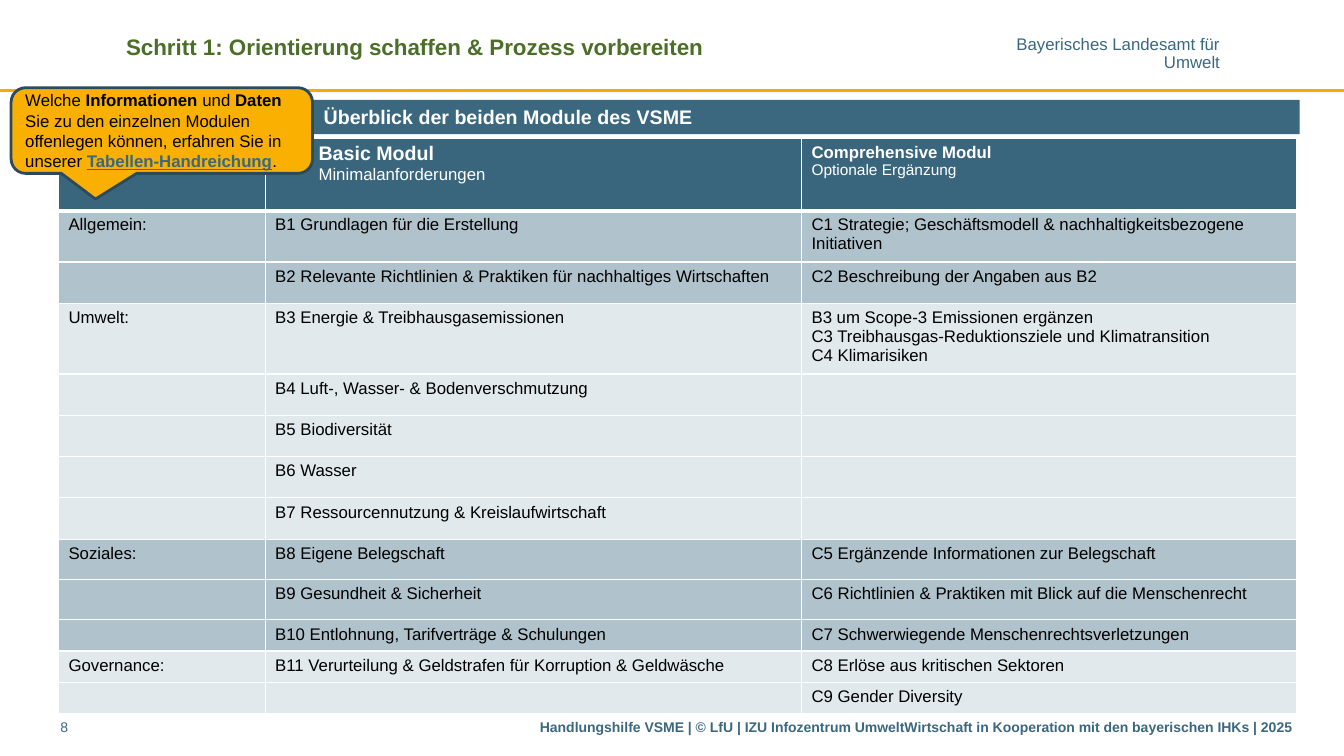
from lxml import etree
from pptx import Presentation
from pptx.dml.color import RGBColor
from pptx.enum.shapes import MSO_CONNECTOR, MSO_SHAPE
from pptx.enum.text import MSO_ANCHOR, PP_ALIGN
from pptx.oxml.ns import qn
from pptx.util import Inches, Pt

TEAL = RGBColor(0x3B, 0x68, 0x7F)
HEADER_TEAL = RGBColor(0x3A, 0x66, 0x7D)
LINK_TEAL = RGBColor(0x3B, 0x68, 0x7E)
DARK_TEAL = RGBColor(0x2B, 0x4B, 0x5C)
GREEN = RGBColor(0x4B, 0x6E, 0x28)
RULE_YELLOW = RGBColor(0xF9, 0xAA, 0x00)
CALLOUT_YELLOW = RGBColor(0xF9, 0xB0, 0x00)
MID_BLUE = RGBColor(0xB0, 0xC2, 0xCB)
PALE_BLUE = RGBColor(0xE1, 0xE9, 0xED)
WHITE = RGBColor(0xFF, 0xFF, 0xFF)
BLACK = RGBColor(0, 0, 0)
LEFT, RIGHT = PP_ALIGN.LEFT, PP_ALIGN.RIGHT
TOP, MIDDLE = MSO_ANCHOR.TOP, MSO_ANCHOR.MIDDLE


def write_lines(frame, lines, size, color, bold=False, align=LEFT):
    frame.word_wrap = True
    frame.text = "\n".join(lines)
    for para in frame.paragraphs:
        para.alignment = align
        para.font.name = "Arial"
        para.font.size = Pt(size)
        para.font.bold = bold
        para.font.color.rgb = color


def add_border(cell, side, points):
    border = etree.SubElement(cell._tc.get_or_add_tcPr(), qn(f"a:ln{side}"), w=str(Pt(points)))
    fill = etree.SubElement(border, qn("a:solidFill"))
    etree.SubElement(fill, qn("a:srgbClr"), val=str(WHITE))


deck = Presentation()
deck.slide_width = Inches(13.33)
deck.slide_height = Inches(7.5)
page = deck.slides.add_slide(deck.slide_layouts[5])
shapes = page.shapes

rule = shapes.add_connector(MSO_CONNECTOR.STRAIGHT, 0, Inches(0.9), Inches(13.33), Inches(0.9))
rule.line.color.rgb = RULE_YELLOW
rule.line.width = Pt(2)
etree.SubElement(rule._element.spPr, qn("a:effectLst"))

title = shapes.title
title.left, title.top = Inches(1.15), Inches(0.28)
title.width, title.height = Inches(6.3), Inches(0.64)
title.text_frame.vertical_anchor = TOP
write_lines(title.text_frame, ["Schritt 1: Orientierung schaffen & Prozess vorbereiten"], 16, GREEN, True)

agency = shapes.add_textbox(Inches(10.07), Inches(0.37), Inches(2.03), Inches(0.34)).text_frame
agency.margin_left = agency.margin_right = agency.margin_top = agency.margin_bottom = 0
write_lines(agency, ["Bayerisches Landesamt für", "Umwelt"], 12, TEAL, align=RIGHT)
for para in agency.paragraphs:
    para.line_spacing = 0.85

page_number = shapes.add_textbox(Inches(0.6), Inches(7.08), Inches(0.7), Inches(0.31)).text_frame
page_number.margin_left = page_number.margin_right = 0
write_lines(page_number, ["8"], 10, TEAL)

footer = shapes.add_textbox(Inches(5.17), Inches(7.08), Inches(7.74), Inches(0.31)).text_frame
write_lines(
    footer,
    ["Handlungshilfe VSME | © LfU | IZU Infozentrum UmweltWirtschaft in Kooperation mit den bayerischen IHKs | 2025"],
    10, TEAL, True, RIGHT,
)

module_rows = [
    (0.72, HEADER_TEAL, "", "Basic Modul\nMinimalanforderungen", "Comprehensive Modul\nOptionale Ergänzung"),
    (0.51, MID_BLUE, "Allgemein:", "B1 Grundlagen für die Erstellung",
     "C1 Strategie; Geschäftsmodell & nachhaltigkeitsbezogene Initiativen"),
    (0.41, MID_BLUE, "", "B2 Relevante Richtlinien & Praktiken für nachhaltiges Wirtschaften",
     "C2 Beschreibung der Angaben aus B2"),
    (0.69, PALE_BLUE, "Umwelt:", "B3 Energie & Treibhausgasemissionen",
     "B3 um Scope-3 Emissionen ergänzen\n"
     "C3 Treibhausgas-Reduktionsziele und Klimatransition\nC4 Klimarisiken"),
    (0.41, PALE_BLUE, "", "B4 Luft-, Wasser- & Bodenverschmutzung", ""),
    (0.41, PALE_BLUE, "", "B5 Biodiversität", ""),
    (0.41, PALE_BLUE, "", "B6 Wasser", ""),
    (0.41, PALE_BLUE, "", "B7 Ressourcennutzung & Kreislaufwirtschaft", ""),
    (0.4, MID_BLUE, "Soziales:", "B8 Eigene Belegschaft", "C5 Ergänzende Informationen zur Belegschaft"),
    (0.4, MID_BLUE, "", "B9 Gesundheit & Sicherheit",
     "C6 Richtlinien & Praktiken mit Blick auf die Menschenrecht"),
    (0.31, MID_BLUE, "", "B10 Entlohnung, Tarifverträge & Schulungen",
     "C7 Schwerwiegende Menschenrechtsverletzungen"),
    (0.31, PALE_BLUE, "Governance:", "B11 Verurteilung & Geldstrafen für Korruption & Geldwäsche",
     "C8 Erlöse aus kritischen Sektoren"),
    (0.31, PALE_BLUE, "", "", "C9 Gender Diversity"),
]
table = shapes.add_table(
    len(module_rows), 3, Inches(0.58), Inches(1.37), Inches(12.28), Inches(5.7)
).table
for column, width in zip(table.columns, (2.05, 5.32, 4.91)):
    column.width = Inches(width)
for row_index, (height, fill_color, *texts) in enumerate(module_rows):
    table.rows[row_index].height = Inches(height)
    is_header = row_index == 0
    for column_index, text in enumerate(texts):
        cell = table.cell(row_index, column_index)
        for side in "LRTB":
            heavy = (is_header and side == "B") or (row_index == 1 and side == "T")
            add_border(cell, side, 3 if heavy else 1)
        cell.fill.solid()
        cell.fill.fore_color.rgb = fill_color
        write_lines(cell.text_frame, text.split("\n"), 12, WHITE if is_header else BLACK)

for column_index, heading_size, note_size in ((1, 14, 12), (2, 12, 11)):
    heading, note = table.cell(0, column_index).text_frame.paragraphs
    heading.font.bold = True
    heading.font.size = Pt(heading_size)
    note.font.size = Pt(note_size)
table.cell(0, 1).margin_left = Inches(0.53)

banner = shapes.add_shape(MSO_SHAPE.RECTANGLE, Inches(0.58), Inches(0.99), Inches(12.31), Inches(0.34))
banner.shadow.inherit = False
banner.fill.solid()
banner.fill.fore_color.rgb = TEAL
banner.line.fill.background()
banner.text_frame.margin_left = Inches(2.63)
banner.text_frame.vertical_anchor = MIDDLE
write_lines(banner.text_frame, ["Überblick der beiden Module des VSME"], 14, WHITE, True)

callout = shapes.add_shape(
    MSO_SHAPE.ROUNDED_RECTANGULAR_CALLOUT, Inches(0.11), Inches(0.87), Inches(2.99), Inches(0.85)
)
callout.shadow.inherit = False
for index, value in enumerate((-0.22, 0.8, 0.17)):
    callout.adjustments[index] = value
callout.fill.solid()
callout.fill.fore_color.rgb = CALLOUT_YELLOW
callout.line.color.rgb = DARK_TEAL
callout.line.width = Pt(2)
callout.text_frame.vertical_anchor = MIDDLE
write_lines(callout.text_frame, [""], 12, BLACK)
hint = callout.text_frame.paragraphs[0]
for text, bold, is_link in (
    ("Welche ", False, False),
    ("Informationen ", True, False),
    ("und ", False, False),
    ("Daten ", True, False),
    ("Sie zu den einzelnen Modulen offenlegen können, erfahren Sie in unserer ", False, False),
    ("Tabellen-Handreichung", True, True),
    (".", False, False),
):
    span = hint.add_run()
    span.text = text
    span.font.bold = bold
    if is_link:
        span.font.underline = True
        span.font.color.rgb = LINK_TEAL

deck.save("out.pptx")
